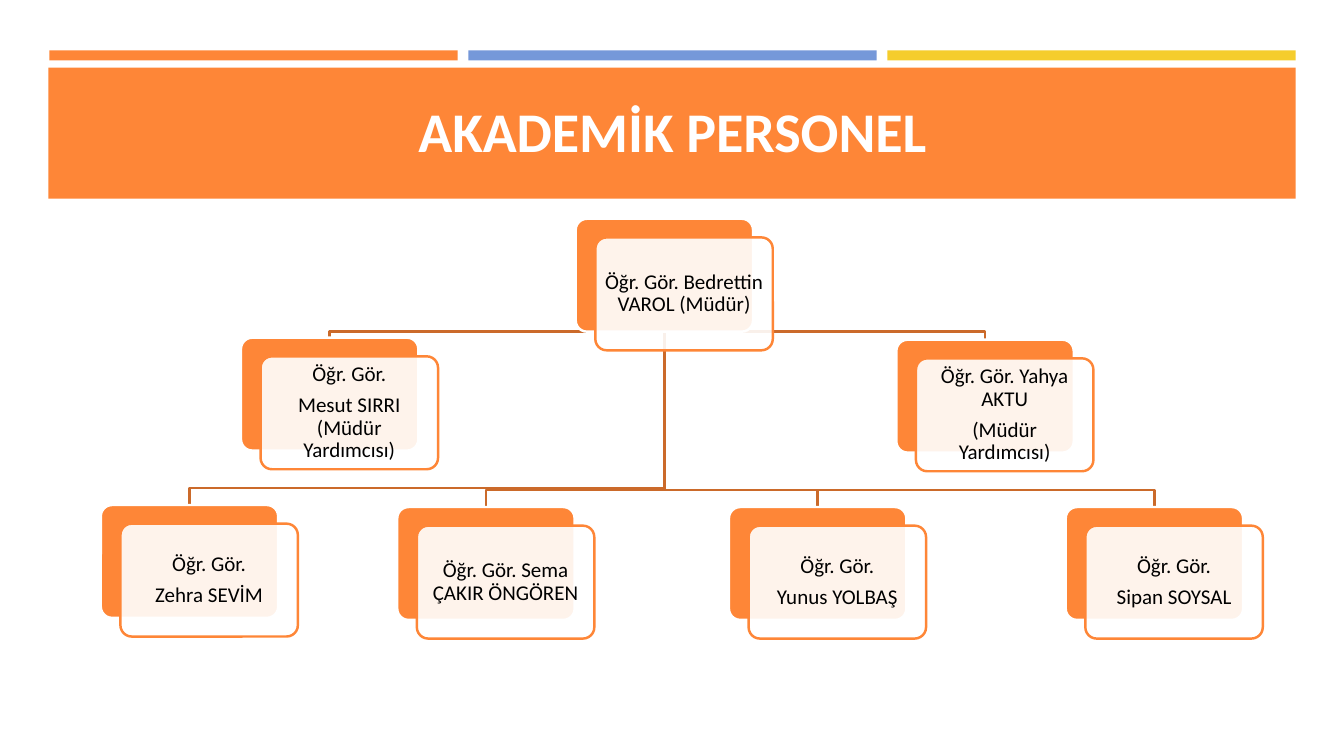
"""Build the academic staff organisation chart slide."""
from pptx import Presentation, util as u
from pptx.dml.color import RGBColor
from pptx.enum import shapes as sh, text as tx
from pptx.oxml.ns import qn
from lxml import etree

TITLE = "AKADEMİK PERSONEL"
HEAD = (5.71, 2.17, ["Öğr. Gör. Bedrettin VAROL (Müdür)"])
AIDES = [
    (2.39, 3.35, ["Öğr. Gör.", "Mesut SIRRI (Müdür Yardımcısı)"]),
    (8.89, 3.37, ["Öğr. Gör. Yahya AKTU", "(Müdür Yardımcısı)"]),
]
STAFF = [
    (1, 5.01, ["Öğr. Gör.", "Zehra SEVİM"]),
    (3.94, 5.03, ["Öğr. Gör. Sema ÇAKIR ÖNGÖREN"]),
    (7.23, 5.03, ["Öğr. Gör.", "Yunus YOLBAŞ"]),
    (10.57, 5.03, ["Öğr. Gör.", "Sipan SOYSAL"]),
]
THEME = dict(font="Calibri", title=40, body=15, line=1.75, main="FE8637", blue="7598D9",
             gold="F5CD2D", link="CB6A2A", white="FFFFFF", ink="000000")
CARD_W, CARD_H = 1.76, 1.12
SHIFT_X, SHIFT_Y = 0.195, 0.185
DROP = 0.17
BAR_X, BAR_W, BAR_STEP = 0.49, 4.05, 4.155

deck = Presentation()
deck.slide_width, deck.slide_height = u.Inches(13.33), u.Inches(7.5)
slide = deck.slides.add_slide(deck.slide_layouts[6])


def color(name):
    return RGBColor.from_string(THEME[name])


def add_box(kind, x, y, w, h, fill, line=None):
    box = slide.shapes.add_shape(kind, *map(u.Inches, (x, y, w, h)))
    box.shadow.inherit = False
    box.fill.solid()
    box.fill.fore_color.rgb = color(fill)
    if line:
        box.line.color.rgb = color(line)
        box.line.width = u.Pt(THEME["line"])
    else:
        box.line.fill.background()
    return box


def write(box, lines, size, ink, bold=False, anchor="MIDDLE", inset=(0.1, 0.05), space=1, after=0):
    frame = box.text_frame
    frame.word_wrap = True
    frame.vertical_anchor = tx.MSO_ANCHOR[anchor]
    frame.margin_left = frame.margin_right = u.Inches(inset[0])
    frame.margin_top = frame.margin_bottom = u.Inches(inset[1])
    for i, line in enumerate(lines):
        para = frame.paragraphs[0] if i == 0 else frame.add_paragraph()
        para.alignment = tx.PP_ALIGN.CENTER
        para.line_spacing, para.space_after = space, u.Pt(after)
        run = para.add_run()
        run.text = line
        run.font.name, run.font.size, run.font.bold = THEME["font"], u.Pt(THEME[size]), bold
        run.font.color.rgb = color(ink)


def add_link(card, bus):
    x, y = HEAD[0] + CARD_W / 2, HEAD[1] + CARD_H
    end = card[0] + CARD_W / 2
    route = [(x, bus), (end, bus), (end, card[1])]
    pen = slide.shapes.build_freeform(u.Inches(x), u.Inches(y))
    pen.add_line_segments([(u.Inches(a), u.Inches(b)) for a, b in route], close=False)
    link = pen.convert_to_shape()
    link.shadow.inherit = False
    link.fill.background()
    link.line.color.rgb = color("link")
    link.line.width = u.Pt(THEME["line"])


def add_card(x, y, lines):
    kind = sh.MSO_SHAPE.ROUNDED_RECTANGLE
    back = add_box(kind, x, y, CARD_W, CARD_H, "main", "white")
    front = add_box(kind, x + SHIFT_X, y + SHIFT_Y, CARD_W, CARD_H, "white", "main")
    back.adjustments[0] = front.adjustments[0] = 0.1
    tone = front.fill._xPr.find(qn("a:solidFill"))[0]
    etree.SubElement(tone, qn("a:alpha"), val="90000")
    write(front, lines, "body", "ink", inset=(0.06, 0.06), space=0.9, after=6)


def main():
    rect = sh.MSO_SHAPE.RECTANGLE
    for i, tone in enumerate(("main", "blue", "gold")):
        add_box(rect, BAR_X + i * BAR_STEP, 0.5, BAR_W, 0.1, tone)
    add_box(rect, 0.48, 0.67, 12.37, 1.3, "main")
    title = slide.shapes.add_textbox(*map(u.Inches, (0.64, 0.77, 12.06, 0.9)))
    write(title, [TITLE], "title", "white", bold=True, anchor="BOTTOM")
    for card in reversed(STAFF):
        add_link(card, card[1] - DROP)
    for card in reversed(AIDES):
        add_link(card, HEAD[1] + CARD_H)
    for card in [HEAD, *AIDES, *STAFF]:
        add_card(*card)
    deck.save("out.pptx")


if __name__ == "__main__":
    main()
